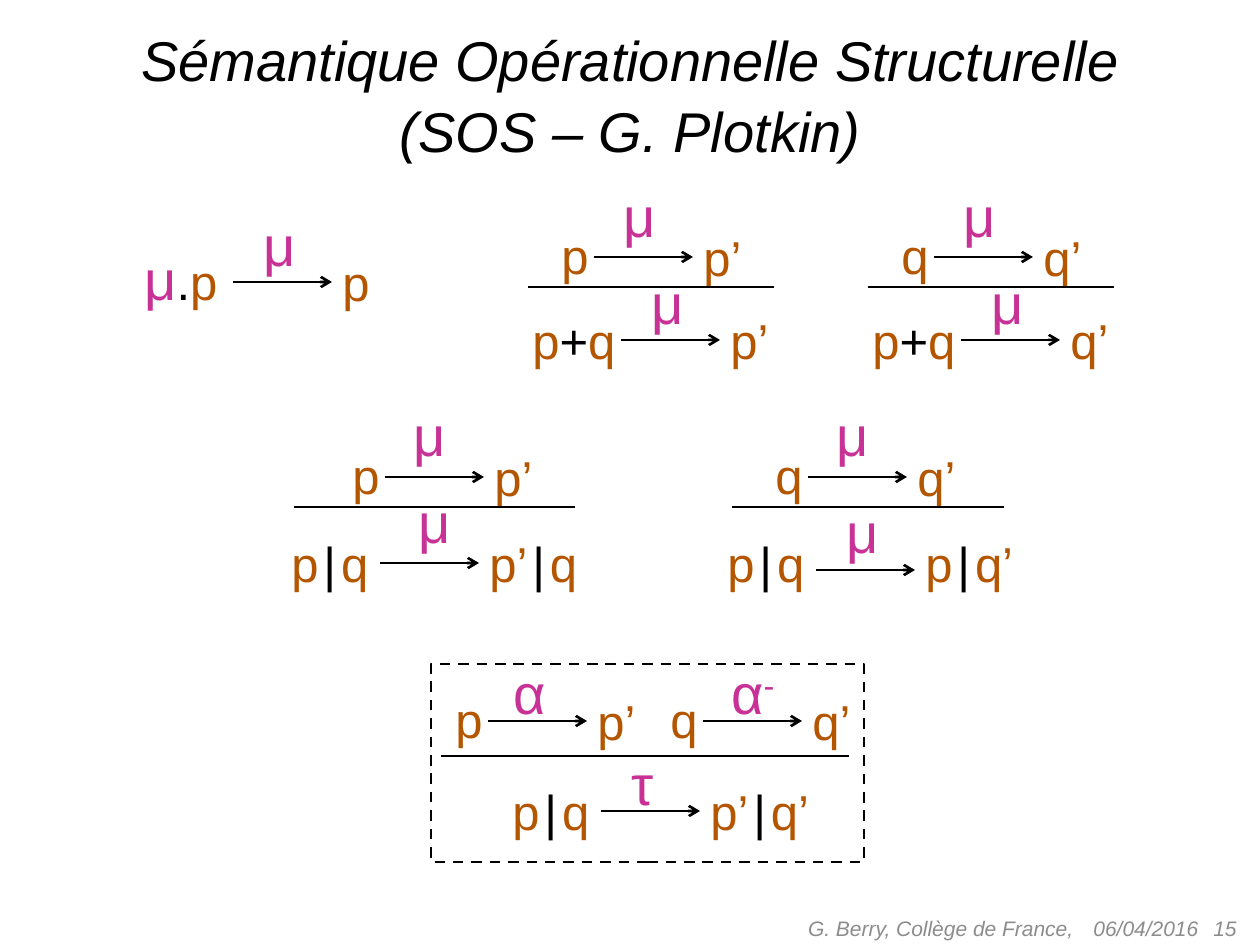
import collections
import itertools

import pptx
import pptx.dml.color
import pptx.enum.dml
import pptx.enum.shapes
import pptx.enum.text
import pptx.oxml
import pptx.oxml.ns
import pptx.util

PX = 914400 / 126
BLACK = pptx.dml.color.RGBColor(0x00, 0x00, 0x00)
ACTION = pptx.dml.color.RGBColor(0xC8, 0x32, 0x96)
PROCESS = pptx.dml.color.RGBColor(0xB4, 0x56, 0x00)
FOOTER_GREY = pptx.dml.color.RGBColor(0x8C, 0x8C, 0x8C)
ALIGN = pptx.enum.text.PP_ALIGN
ANCHOR = pptx.enum.text.MSO_ANCHOR

ARROW_LENGTH = 99
PREMISE_SOURCE_WIDTH = 67
WIDTHS = {
    "p": 53, "p’": 64, "q’": 64, "p+q": 123, "p|q": 117, "μ.p": 113,
    "p’|q": 115, "p|q’": 115, "p’|q’": 125,
    "μ": 58, "τ": 50, "α": 62, "α-": 74,
}

# x and y give the arrow's start; label_at is relative to that start.
Transition = collections.namedtuple(
    "Transition", "x y source label target label_at terms_dy",
    defaults=[(18, -78), -39])


def px(length):
    return pptx.util.Emu(round(length * PX))


def add_run(paragraph, text, size, color, italic=False):
    run = paragraph.add_run()
    run.text = text
    run.font.name = "Arial"
    run.font.size = pptx.util.Pt(size)
    run.font.color.rgb = color
    run.font.italic = italic
    return run


def add_text_box(shapes, left, top, width, height, wrap=False):
    frame = shapes.add_textbox(px(left), px(top), px(width), px(height)).text_frame
    frame.word_wrap = wrap
    frame.auto_size = pptx.enum.text.MSO_AUTO_SIZE.SHAPE_TO_FIT_TEXT
    return frame


def add_line(shapes, left, top, width, arrow=False):
    line = shapes.add_connector(
        pptx.enum.shapes.MSO_CONNECTOR.STRAIGHT,
        px(left), px(top), px(left + width), px(top))
    line.line.color.rgb = BLACK
    line.line.width = pptx.util.Pt(1.5)
    if arrow:
        head = pptx.oxml.parse_xml(
            f'<a:tailEnd {pptx.oxml.ns.nsdecls("a")} type="arrow"/>')
        line.line._get_or_add_ln().append(head)
    line._element.spPr.append(
        pptx.oxml.parse_xml(f'<a:effectLst {pptx.oxml.ns.nsdecls("a")}/>'))


def symbol_color(symbol):
    return {"μ": ACTION, ".": BLACK, "+": BLACK, "|": BLACK}.get(symbol, PROCESS)


def add_term(shapes, left, top, term, width):
    """Place a process term, coloured symbol by symbol."""
    height = 84 if "μ" in term else 76 if "|" in term else 71
    paragraph = add_text_box(shapes, left, top, width, height).paragraphs[0]
    paragraph.line_spacing = 1.05
    paragraph.space_before = pptx.util.Pt(6)
    for color, symbols in itertools.groupby(term, symbol_color):
        text = "".join(symbols)
        if text == "|":
            add_run(paragraph, " ", 10, PROCESS)
        add_run(paragraph, text, 32 if color == ACTION else 28, color)
        if text == "|":
            add_run(paragraph, " ", 10, PROCESS)


def add_action(shapes, left, top, label):
    paragraph = add_text_box(shapes, left, top, WIDTHS[label], 81).paragraphs[0]
    for symbol in label:
        run = add_run(paragraph, symbol, 32, ACTION)
        if symbol == "-":
            run._r.get_or_add_rPr().set("baseline", "30000")


def add_transition(shapes, left, top, step):
    """Draw source, labelled arrow and target from the given corner."""
    x, y = left + step.x, top + step.y
    is_premise = len(step.source) == 1
    source_dx, source_width = (
        (-45, PREMISE_SOURCE_WIDTH) if is_premise else (-101, WIDTHS[step.source]))
    source_dy = (step.terms_dy - 2 if is_premise
                 else step.terms_dy - 8 if "μ" in step.source else step.terms_dy)
    add_term(shapes, x + source_dx, y + source_dy, step.source, source_width)
    add_line(shapes, x, y, ARROW_LENGTH, arrow=True)
    add_action(shapes, x + step.label_at[0], y + step.label_at[1], step.label)
    add_term(shapes, x + 97, y + step.terms_dy, step.target, WIDTHS[step.target])


def add_inference_rule(slide, left, bar_top, bar_width, premises, conclusion):
    """Draw premises above a bar and the conclusion below it."""
    shapes = slide.shapes.add_group_shape().shapes
    for step in [conclusion, *premises]:
        add_transition(shapes, left, bar_top, step)
    add_line(shapes, left, bar_top, bar_width)


def add_prefix_axiom(slide, left, top):
    shapes = slide.shapes.add_group_shape().shapes
    add_transition(shapes, left, top, Transition(101, 78, "μ.p", "μ", "p"))


def add_choice_rules(slide, left, top):
    for column, process in enumerate("pq"):
        after = process + "’"
        add_inference_rule(
            slide, left + 340 * column, top, 246,
            [Transition(66, -30, process, "μ", after, (17, -82))],
            Transition(93, 53, "p+q", "μ", after))


def add_parallel_rules(slide, left, top):
    add_inference_rule(
        slide, left, top, 281,
        [Transition(91, -30, "p", "μ", "p’", (16, -83))],
        Transition(86, 56, "p|q", "μ", "p’|q", (26, -82)))
    add_inference_rule(
        slide, left + 438, top, 272,
        [Transition(76, -30, "q", "μ", "q’", (16, -83))],
        Transition(84, 63, "p|q", "μ", "p|q’", (18, -79), -46))


def add_synchronisation_rule(slide, left, top, width, height):
    add_inference_rule(
        slide, left + 10, top + 92, 408,
        [Transition(47, -35, "p", "α", "p’", (13, -69)),
         Transition(262, -35, "q", "α-", "q’", (16, -69))],
        Transition(160, 55, "p|q", "τ", "p’|q’", (18, -68)))
    frame = slide.shapes.add_shape(
        pptx.enum.shapes.MSO_SHAPE.RECTANGLE,
        px(left), px(top), px(width), px(height))
    frame.shadow.inherit = False
    frame.fill.background()
    frame.line.color.rgb = BLACK
    frame.line.width = pptx.util.Pt(1.5)
    frame.line.dash_style = pptx.enum.dml.MSO_LINE.DASH


def add_title(slide, left, top, width, height):
    paragraph = add_text_box(
        slide.shapes, left, top, width, height, wrap=True).paragraphs[0]
    paragraph.alignment = ALIGN.CENTER
    paragraph.line_spacing = 1.05
    add_run(paragraph, "Sémantique Opérationnelle Structurelle", 32, BLACK, True)
    paragraph.add_line_break()
    add_run(paragraph, "(SOS – G. Plotkin)", 32, BLACK, True)


def add_footer(slide, left, top, height):
    for dx, width, text, alignment in [
        (262, 294, "15", ALIGN.RIGHT),
        (0, 399, "G. Berry, Collège de France, ", ALIGN.RIGHT),
        (388, 168, "06/04/2016", ALIGN.LEFT),
    ]:
        frame = add_text_box(slide.shapes, left + dx, top, width, height, wrap=True)
        frame.auto_size = pptx.enum.text.MSO_AUTO_SIZE.NONE
        frame.vertical_anchor = ANCHOR.MIDDLE
        frame.paragraphs[0].alignment = alignment
        add_run(frame.paragraphs[0], text, 12, FOOTER_GREY, True)


def main():
    presentation = pptx.Presentation()
    presentation.slide_width = px(1260)
    presentation.slide_height = px(945)
    slide = presentation.slides.add_slide(presentation.slide_layouts[6])
    add_title(slide, 32, 16, 1197, 165)
    add_prefix_axiom(slide, 132, 204)
    add_parallel_rules(slide, 294, 507)
    add_choice_rules(slide, 528, 287)
    add_synchronisation_rule(slide, 431, 664, 433, 198)
    add_footer(slide, 693, 903, 50)
    presentation.save("out.pptx")


if __name__ == "__main__":
    main()
